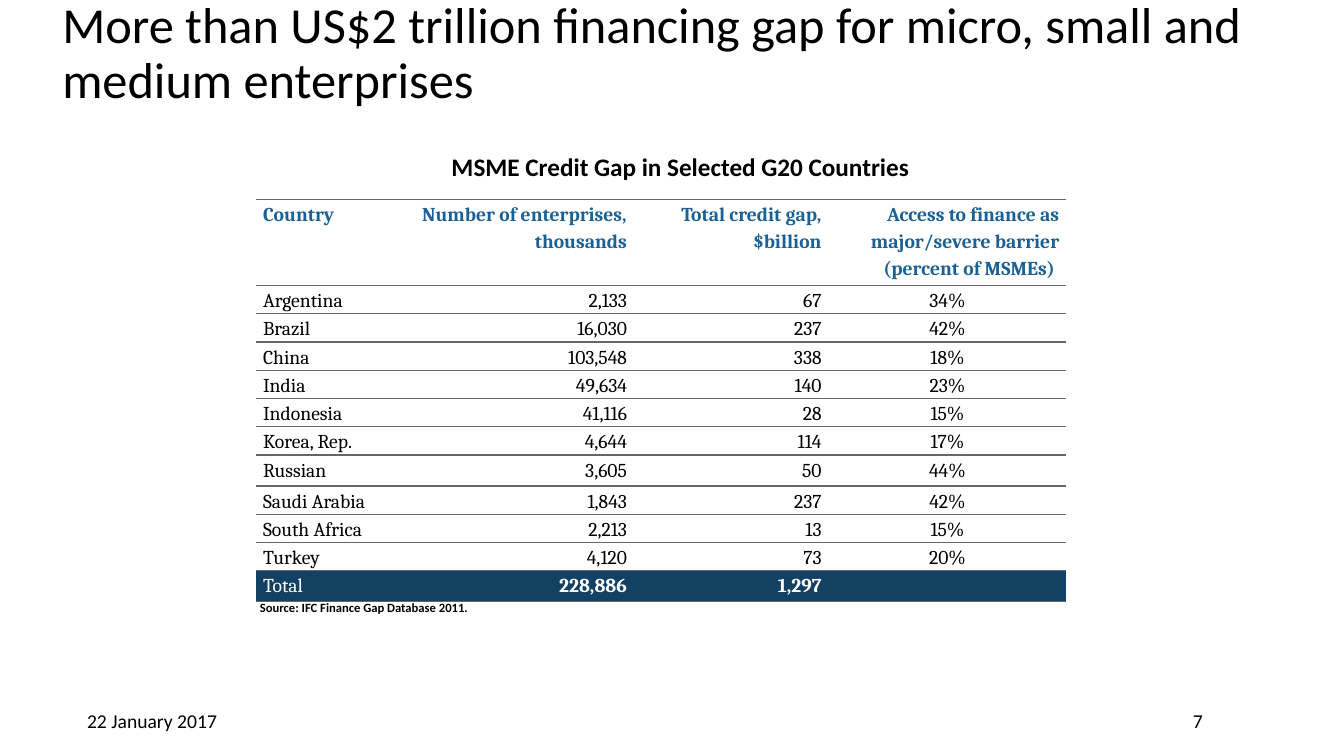
from pptx import Presentation
from pptx.util import Pt
from pptx.dml.color import RGBColor
from pptx.enum.text import PP_ALIGN as Align, MSO_ANCHOR as Anchor
from pptx.oxml import parse_xml
from pptx.oxml.ns import nsdecls

BLACK = RGBColor(0x00, 0x00, 0x00)
WHITE = RGBColor(0xFF, 0xFF, 0xFF)
BLUE = RGBColor(0x1C, 0x61, 0x94)
NAVY = RGBColor(0x13, 0x41, 0x63)
GRAY = RGBColor(0x66, 0x66, 0x66)

HEAD = ("Country", "Number of enterprises, thousands", "Total credit gap, $billion",
        "Access to finance as major/severe barrier (percent of MSMEs) ")
GAPS = [
    ("Argentina", "2,133", "67", "34%"),
    ("Brazil", "16,030", "237", "42%"),
    ("China", "103,548", "338", "18%"),
    ("India", "49,634", "140", "23%"),
    ("Indonesia", "41,116", "28", "15%"),
    ("Korea, Rep.", "4,644", "114", "17%"),
    ("Russian", "3,605", "50", "44%"),
    ("Saudi Arabia", "1,843", "237", "42%"),
    ("South Africa", "2,213", "13", "15%"),
    ("Turkey", "4,120", "73", "20%"),
]
TOTAL = ("Total", "228,886", "1,297", "")
WIDTHS = (92.2, 177.8, 139, 169.9)
HEIGHTS = [61.5] + [20.2] * 6 + [22.2] + [20.2] * 3 + [22.2]


class Deck:
    def __init__(self, slide, sans="Calibri", serif="Cambria"):
        self.slide = slide
        self.sans = sans
        self.serif = serif

    def style(self, para, face, size, color, bold=False, align=Align.LEFT, space=None):
        para.alignment = align
        if space:
            para.line_spacing = space
        for run in para.runs:
            font = run.font
            font.name, font.size, font.bold = face, Pt(size), bold
            font.color.rgb = color

    def text(self, words, box, size, bold=False, align=Align.LEFT,
             anchor=Anchor.TOP, wrap=True, space=None):
        frame = self.slide.shapes.add_textbox(*map(Pt, box)).text_frame
        frame.word_wrap = wrap
        frame.vertical_anchor = anchor
        frame.text = words
        self.style(frame.paragraphs[0], self.sans, size, BLACK, bold, align, space)

    def edges(self, cell):
        rule = f'<a:solidFill><a:srgbClr val="{GRAY}"/></a:solidFill>'
        props = cell._tc.get_or_add_tcPr()
        for spot, side in enumerate("LRTB"):
            ink = rule if side in "TB" else "<a:noFill/>"
            props.insert(spot, parse_xml(
                f'<a:ln{side} {nsdecls("a")} w="{Pt(1)}">{ink}</a:ln{side}>'))

    def cell(self, cell, words, color, bold, align, fill):
        cell.margin_left = cell.margin_right = Pt(5)
        cell.margin_top = cell.margin_bottom = Pt(0)
        if fill is None:
            cell.fill.background()
        else:
            cell.fill.solid()
            cell.fill.fore_color.rgb = fill
        self.edges(cell)
        if words:
            cell.text_frame.text = words
            self.style(cell.text_frame.paragraphs[0], self.serif, 14, color, bold, align, 1.2)

    def table(self, rows, left, top):
        box = (left, top, sum(WIDTHS), sum(HEIGHTS))
        table = self.slide.shapes.add_table(len(rows), len(WIDTHS), *map(Pt, box)).table
        table.first_row = table.horz_banding = False
        for col, width in zip(table.columns, WIDTHS):
            col.width = Pt(width)
        last = len(rows) - 1
        for r, row in enumerate(rows):
            table.rows[r].height = Pt(HEIGHTS[r])
            color = BLUE if r == 0 else WHITE if r == last else BLACK
            for c, words in enumerate(row):
                if r == 0:
                    align = Align.RIGHT if c else Align.LEFT
                else:
                    align = (Align.JUSTIFY, Align.RIGHT, Align.RIGHT, Align.CENTER)[c]
                bold = r == 0 or (r == last and c > 0)
                self.cell(table.cell(r, c), words, color, bold, align,
                          NAVY if r == last else None)


def main():
    show = Presentation()
    show.slide_width, show.slide_height = Pt(960), Pt(540)
    deck = Deck(show.slides.add_slide(show.slide_layouts[6]))
    for words, left, width in (("22 January 2017", 0.7, 216), ("7", 752.4, 206.6)):
        deck.text(words, (left, 500.4, width, 28.8), 14,
                  align=Align.CENTER, anchor=Anchor.MIDDLE)
    deck.text("More than US$2 trillion financing gap for micro, small and medium enterprises",
              (37.4, 0, 893.5, 77.8), 36, anchor=Anchor.MIDDLE, space=0.9)
    deck.text("Source: IFC Finance Gap Database 2011.", (178.6, 424.8, 360, 18), 9, bold=True)
    deck.table([HEAD, *GAPS, TOTAL], 182.9, 142.4)
    deck.text("MSME Credit Gap in Selected G20 Countries", (315.4, 104.4, 344.2, 28.8), 18,
              bold=True, wrap=False)
    show.save("out.pptx")


if __name__ == "__main__":
    main()
